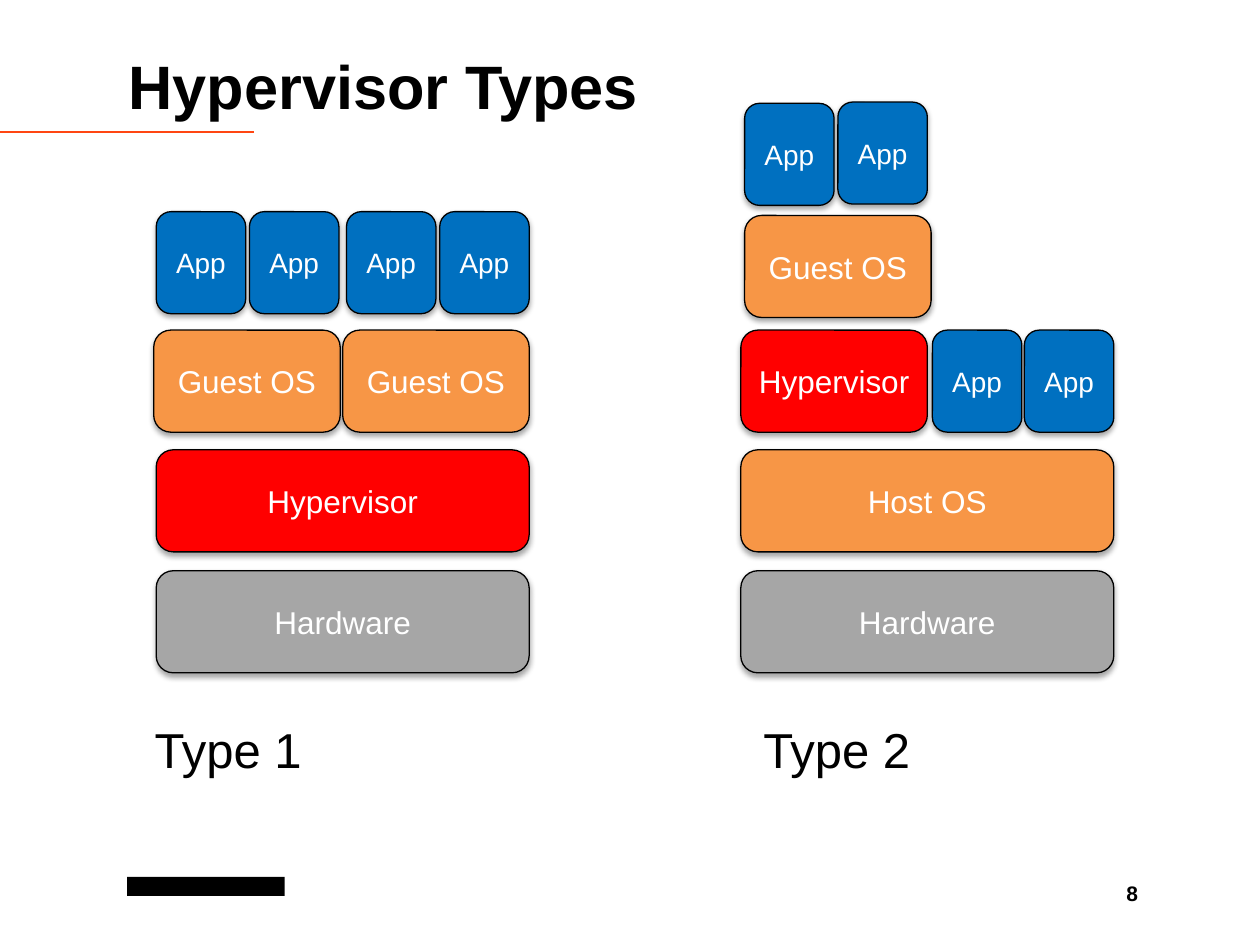
import pptx
import pptx.dml.color
import pptx.enum.shapes
import pptx.enum.text
import pptx.oxml
import pptx.util
from pptx.util import Inches

THEME = {
    "font": "Arial",
    "text": "000000", "label": "FFFFFF", "outline": "000000", "accent": "FF4612",
    "hardware": "A6A6A6", "hypervisor": "FF0000", "os": "F79646", "app": "0070C0",
    "title_size": 35, "caption_size": 28, "box_size": 18, "app_size": 16, "number_size": 12,
}

# Content: each row is its top and its blocks (label, role, left, width)
FULL, HALF, SMALL = 2.96, 1.48, 0.71
BOX_HEIGHT = 0.81
TITLE = "Hypervisor Types"
CAPTIONS = ("Type 1", "Type 2")
PAGE_NUMBER = "8"
TYPE_1 = [
    (4.53, [("Hardware", "hardware", 1.24, FULL)]),
    (3.57, [("Hypervisor", "hypervisor", 1.24, FULL)]),
    (2.62, [("Guest OS", "os", left, HALF) for left in (1.22, 2.72)]),
    (1.68, [("App", "app", left, SMALL) for left in (1.24, 1.98, 2.75, 3.49)]),
]
TYPE_2 = [
    (4.53, [("Hardware", "hardware", 5.88, FULL)]),
    (3.57, [("Host OS", "os", 5.88, FULL)]),
    (2.62, [("Hypervisor", "hypervisor", 5.88, HALF),
            ("App", "app", 7.4, SMALL), ("App", "app", 8.13, SMALL)]),
    (1.71, [("Guest OS", "os", 5.91, HALF)]),
    (0.82, [("App", "app", 5.91, SMALL)]),
    (0.81, [("App", "app", 6.65, SMALL)]),
]
CAPTION_TAB = 4.83

NAMESPACE = 'xmlns:a="http://schemas.openxmlformats.org/drawingml/2006/main"'
SHADOW = (f'<a:outerShdw {NAMESPACE} blurRad="40000" dist="23000" dir="5400000" rotWithShape="0">'
          '<a:srgbClr val="000000"><a:alpha val="35000"/></a:srgbClr></a:outerShdw>')


def color(name):
    return pptx.dml.color.RGBColor.from_string(THEME[name])


def write(shape, text, size, color_name, align="LEFT", anchor="MIDDLE", bold=False,
          insets=(0.1, 0.05, 0.1, 0.05)):
    frame = shape.text_frame
    frame.text = text
    frame.word_wrap = True
    frame.vertical_anchor = getattr(pptx.enum.text.MSO_ANCHOR, anchor)
    frame.margin_left, frame.margin_top, frame.margin_right, frame.margin_bottom = map(Inches, insets)
    paragraph = frame.paragraphs[0]
    paragraph.alignment = getattr(pptx.enum.text.PP_ALIGN, align)
    for run in paragraph.runs:
        run.font.name = THEME["font"]
        run.font.size = pptx.util.Pt(THEME[size])
        run.font.bold = bold
        run.font.color.rgb = color(color_name)
    return paragraph


def place(shape, *box):
    shape.left, shape.top, shape.width, shape.height = map(Inches, box)


def add_block(slide, label, role, left, top, width):
    block = slide.shapes.add_shape(pptx.enum.shapes.MSO_SHAPE.ROUNDED_RECTANGLE,
                                   *map(Inches, (left, top, width, BOX_HEIGHT)))
    block.fill.solid()
    block.fill.fore_color.rgb = color(role)
    block.line.color.rgb = color("outline")
    block.line.width = pptx.util.Pt(0.75)
    block.shadow.inherit = False
    effects = block._element.spPr.find(pptx.oxml.ns.qn("a:effectLst"))
    effects.append(pptx.oxml.parse_xml(SHADOW))
    size = "app_size" if role == "app" else "box_size"
    write(block, label, size, "label", align="CENTER", insets=(0.05,) * 4)


def main():
    presentation = pptx.Presentation()
    presentation.slide_width, presentation.slide_height = Inches(10), Inches(7.5)
    slide = presentation.slides.add_slide(presentation.slide_layouts[5])

    # Rule under the title
    rule = slide.shapes.add_connector(pptx.enum.shapes.MSO_CONNECTOR.STRAIGHT,
                                      *map(Inches, (0, 1.05, 2.02, 1.05)))
    rule.line.color.rgb = color("accent")
    rule.line.width = pptx.util.Pt(1)
    rule._element.spPr.append(pptx.oxml.parse_xml(f"<a:effectLst {NAMESPACE}/>"))

    # Plain bar in the footer
    bar = slide.shapes.add_shape(pptx.enum.shapes.MSO_SHAPE.RECTANGLE,
                                 *map(Inches, (1.01, 6.96, 1.25, 0.15)))
    bar.fill.solid()
    bar.fill.fore_color.rgb = color("text")
    bar.line.fill.background()
    bar.shadow.inherit = False

    # Title
    title = slide.shapes.title
    place(title, 1.02, 0.05, 8.49, 1.25)
    write(title, TITLE, "title_size", "text", bold=True, insets=(0, 0.05, 0.1, 0.05))

    # Both stacks, from the hardware up
    for top, blocks in TYPE_1 + TYPE_2:
        for label, role, left, width in blocks:
            add_block(slide, label, role, left, top, width)

    # Captions share one line, the second set at a tab stop
    caption = slide.shapes.add_textbox(*map(Inches, (1.13, 5.66, 7.74, 0.57)))
    paragraph = write(caption, "\t".join(CAPTIONS), "caption_size", "text", anchor="TOP")
    paragraph._p.get_or_add_pPr().append(pptx.oxml.parse_xml(
        f'<a:tabLst {NAMESPACE}><a:tab pos="{Inches(CAPTION_TAB)}" algn="l"/></a:tabLst>'))

    # Page number
    number = slide.shapes.add_textbox(*map(Inches, (8.62, 6.94, 0.51, 0.4)))
    write(number, PAGE_NUMBER, "number_size", "text", align="RIGHT", anchor="TOP", bold=True,
          insets=(0.1, 0.05, 0.1, 0))

    presentation.save("out.pptx")


if __name__ == "__main__":
    main()
